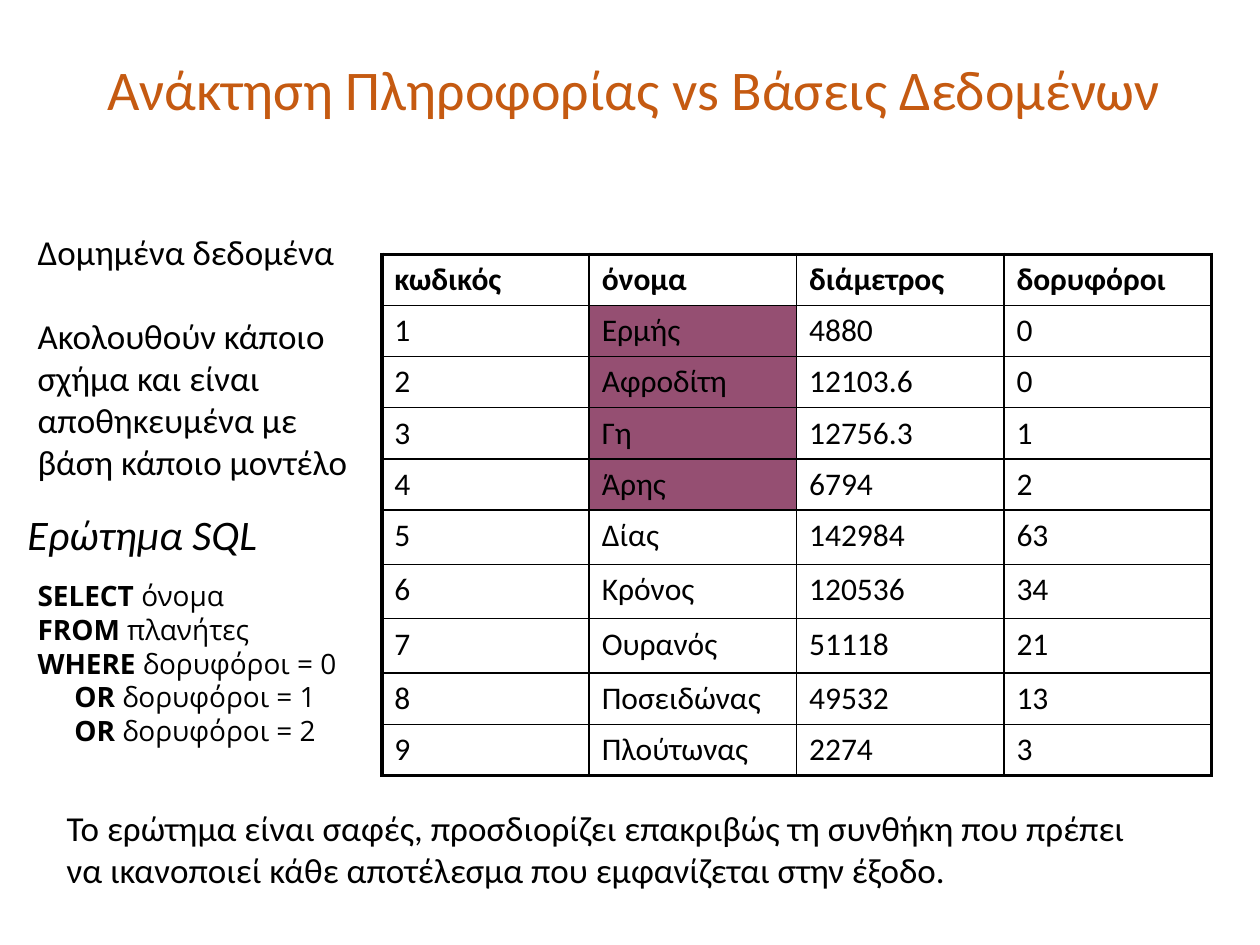
from dataclasses import dataclass

from lxml import etree
from pptx import Presentation
from pptx.dml.color import RGBColor
from pptx.enum import text
from pptx.oxml import ns
from pptx.util import Pt


@dataclass(frozen=True)
class Theme:
    sans: str = "Calibri"
    query_font: str = "Open Sans"
    ink: str = "000000"
    accent: str = "C55A11"
    highlight: str = "954F72"
    title_size: float = 32
    heading_size: float = 24
    body_size: float = 20
    table_size: float = 18
    query_size: float = 16
    thin: float = 1
    thick: float = 2.25


THEME = Theme()

TITLE = "Ανάκτηση Πληροφορίας vs Βάσεις Δεδομένων"
STRUCTURED_DATA = [
    "Δομημένα δεδομένα",
    "Ακολουθούν κάποιο σχήμα και είναι αποθηκευμένα με βάση κάποιο μοντέλο",
]
QUERY_HEADING = ["Ερώτημα SQL"]
QUERY = [  # keyword, rest of the line, indent
    ("SELECT", " όνομα", 0),
    ("FROM", " πλανήτες", 0),
    ("WHERE", " δορυφόροι = 0", 0),
    ("OR", " δορυφόροι = 1", 21),
    ("OR", " δορυφόροι = 2", 21),
]
CONCLUSION = [
    "Το ερώτημα είναι σαφές, προσδιορίζει επακριβώς τη συνθήκη που πρέπει",
    "να ικανοποιεί κάθε αποτέλεσμα που εμφανίζεται στην έξοδο.",
]
PLANETS = [
    ("κωδικός", "όνομα", "διάμετρος", "δορυφόροι"),
    ("1", "Ερμής", "4880", "0"),
    ("2", "Αφροδίτη", "12103.6", "0"),
    ("3", "Γη", "12756.3", "1"),
    ("4", "Άρης", "6794", "2"),
    ("5", "Δίας", "142984", "63"),
    ("6", "Κρόνος", "120536", "34"),
    ("7", "Ουρανός", "51118", "21"),
    ("8", "Ποσειδώνας", "49532", "13"),
    ("9", "Πλούτωνας", "2274", "3"),
]
MATCHING_ROWS = range(1, 5)
NAME_COLUMN = 1
TALL_ROWS = range(5, 8)
ROW_HEIGHT, TALL_ROW_HEIGHT = 29.2, 31.1
COLUMN_WIDTH = 118.5
TABLE_LEFT, TABLE_TOP = 218.2, 145.4


def style(font, size, color=THEME.ink, name=THEME.sans, bold=False, italic=False):
    font.name, font.size = name, Pt(size)
    font.bold, font.italic = bold, italic
    font.color.rgb = RGBColor.from_string(color)


def add_box(page, left, top, width, height):
    box = page.shapes.add_textbox(Pt(left), Pt(top), Pt(width), Pt(height))
    box.text_frame.word_wrap = True
    return box.text_frame


def add_paragraphs(page, area, lines, size, gap=0, italic=False):
    frame = add_box(page, *area)
    frame.text = "\n".join(lines)
    for index, para in enumerate(frame.paragraphs):
        style(para.font, size, italic=italic)
        para.space_before = Pt(gap if index else 0)


def add_query(page, area):
    frame = add_box(page, *area)
    for index, (keyword, rest, indent) in enumerate(QUERY):
        para = frame.add_paragraph() if index else frame.paragraphs[0]
        style(para.font, THEME.query_size, name=THEME.query_font)
        para.line_spacing = Pt(19.3)
        para._p.get_or_add_pPr().set("marL", str(Pt(indent)))
        for words, bold in ((keyword, True), (rest, False)):
            span = para.add_run()
            span.text = words
            style(span.font, THEME.query_size, name=THEME.query_font, bold=bold)


def set_borders(cell, outer_sides):
    """Draw thick lines on the sides at the table's edge, thin ones elsewhere."""
    properties = cell._tc.get_or_add_tcPr()
    for index, (side, outer) in enumerate(outer_sides.items()):
        line = etree.Element(ns.qn(f"a:ln{side}"))
        line.set("w", str(Pt(THEME.thick if outer else THEME.thin)))
        fill = etree.SubElement(line, ns.qn("a:solidFill"))
        etree.SubElement(fill, ns.qn("a:srgbClr")).set("val", THEME.ink)
        properties.insert(index, line)


def add_planets(page):
    heights = [TALL_ROW_HEIGHT if row in TALL_ROWS else ROW_HEIGHT
               for row in range(len(PLANETS))]
    columns = len(PLANETS[0])
    table = page.shapes.add_table(
        len(PLANETS), columns, Pt(TABLE_LEFT), Pt(TABLE_TOP),
        Pt(columns * COLUMN_WIDTH), Pt(sum(heights))).table
    table.first_row = table.horz_banding = False
    for column in table.columns:
        column.width = Pt(COLUMN_WIDTH)
    for row, values in enumerate(PLANETS):
        table.rows[row].height = Pt(heights[row])
        for column, value in enumerate(values):
            cell = table.cell(row, column)
            cell.text = value
            style(cell.text_frame.paragraphs[0].font, THEME.table_size, bold=row == 0)
            if row in MATCHING_ROWS and column == NAME_COLUMN:
                cell.fill.solid()
                cell.fill.fore_color.rgb = RGBColor.from_string(THEME.highlight)
            else:
                cell.fill.background()
            set_borders(cell, {
                "L": column == 0,
                "R": column == columns - 1,
                "T": row == 0,
                "B": row == len(PLANETS) - 1,
            })


def add_title(page):
    title = page.shapes.title
    title.left, title.top, title.width, title.height = map(Pt, (54, 0.7, 621, 104.4))
    frame = title.text_frame
    frame.text = TITLE
    frame.auto_size = text.MSO_AUTO_SIZE.NONE
    frame.vertical_anchor = text.MSO_ANCHOR.MIDDLE
    para = frame.paragraphs[0]
    para.alignment = text.PP_ALIGN.LEFT
    para.line_spacing = 0.9
    style(para.font, THEME.title_size, THEME.accent)


def main():
    deck = Presentation()
    deck.slide_width, deck.slide_height = Pt(720), Pt(540)
    page = deck.slides.add_slide(deck.slide_layouts.get_by_name("Title Only"))
    add_title(page)
    add_planets(page)
    add_query(page, (14.4, 326.9, 198, 104.4))
    add_paragraphs(page, (31, 457.2, 628.6, 55.4), CONCLUSION, THEME.body_size)
    add_paragraphs(page, (8.6, 287.3, 150, 36), QUERY_HEADING,
                   THEME.heading_size, italic=True)
    add_paragraphs(page, (14.4, 128.2, 193, 152.6), STRUCTURED_DATA,
                   THEME.body_size, gap=24)
    deck.save("out.pptx")


if __name__ == "__main__":
    main()
